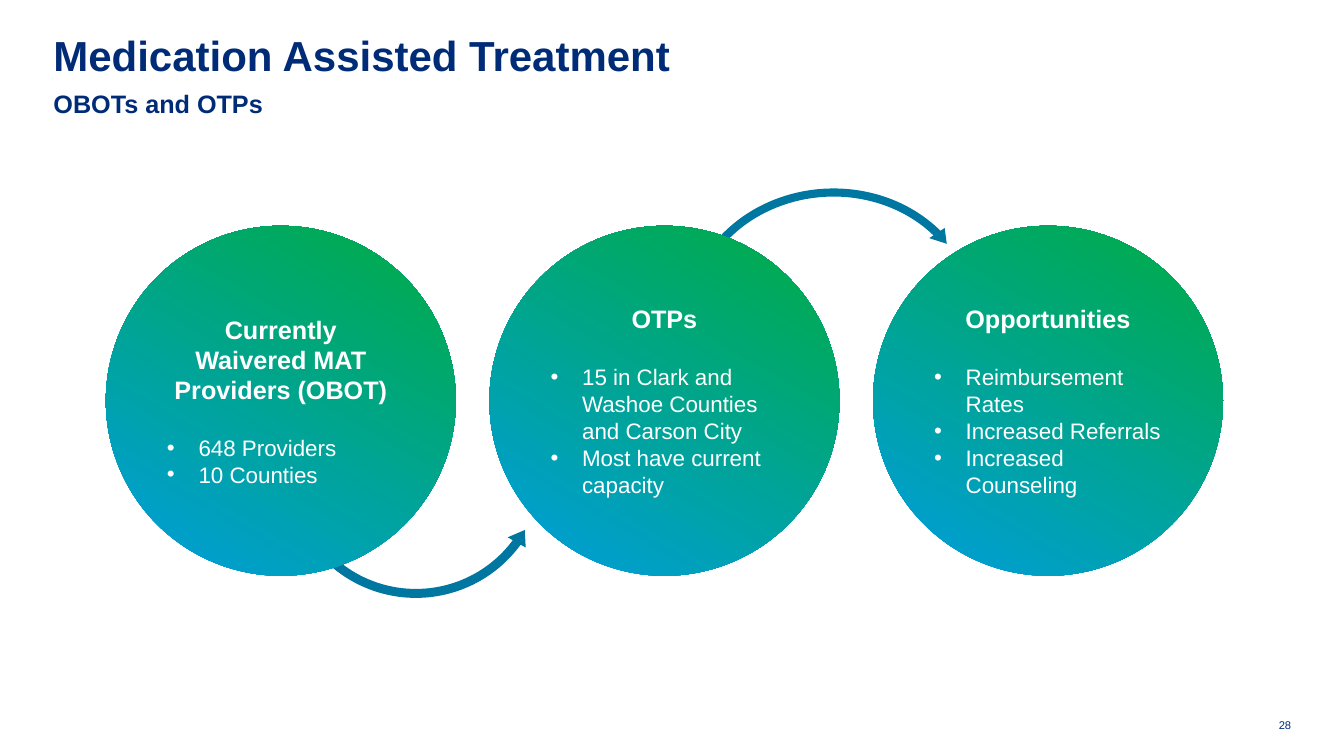
from dataclasses import dataclass

from lxml import etree
from pptx import Presentation
from pptx.dml.color import RGBColor
from pptx.enum.shapes import MSO_SHAPE
from pptx.enum.text import MSO_ANCHOR, PP_ALIGN
from pptx.oxml.ns import qn
from pptx.util import Pt

ELLIPSE = MSO_SHAPE.OVAL
CLOCKWISE = MSO_SHAPE.CIRCULAR_ARROW
COUNTERCLOCKWISE = MSO_SHAPE.LEFT_CIRCULAR_ARROW
LEFT, CENTER, RIGHT = PP_ALIGN.LEFT, PP_ALIGN.CENTER, PP_ALIGN.RIGHT
TOP, MIDDLE = MSO_ANCHOR.TOP, MSO_ANCHOR.MIDDLE


@dataclass(frozen=True)
class Theme:
    """Colours and type sizes of the slide."""

    font: str = "Arial"
    navy: str = "002C77"
    teal: str = "0077A0"
    blue: str = "009DE0"
    green: str = "00AC41"
    white: str = "FFFFFF"
    title: int = 30
    heading: int = 18
    body: int = 16
    number: int = 8


THEME = Theme()
CIRCLE_SIZE, CIRCLE_TOP = 250, 161.3
FIRST_CIRCLE, CIRCLE_STEP = 75.6, 274
BULLET_INDENT, HEADING_GAP = 22.5, 21
CIRCLES = [
    ("Currently Waivered MAT Providers (OBOT)", ["648 Providers", "10 Counties"]),
    ("OTPs", ["15 in Clark and Washoe\u00a0Counties and Carson City",
              "Most have current capacity"]),
    ("Opportunities", ["Reimbursement Rates", "Increased Referrals",
                       "Increased Counseling"]),
]


def add_bullet(para):
    """Give the paragraph a hanging bullet."""
    properties = para._p.get_or_add_pPr()
    properties.set("marL", str(Pt(BULLET_INDENT)))
    properties.set("indent", str(-Pt(BULLET_INDENT)))
    font = etree.SubElement(properties, qn("a:buFont"))
    font.set("typeface", THEME.font)
    etree.SubElement(properties, qn("a:buChar")).set("char", "•")


def write(para, text, size, color, bold=False, align=LEFT, bullet=False,
          before=0, line_spacing=None):
    """Put formatted text in a paragraph."""
    if bullet:
        add_bullet(para)
    para.alignment = align
    para.space_before = Pt(before)
    para.line_spacing = line_spacing
    span = para.add_run()
    span.text = text
    span.font.name = THEME.font
    span.font.size = Pt(size)
    span.font.bold = bold
    span.font.color.rgb = RGBColor.from_string(color)


def add_label(page, left, top, width, height, text, **style):
    """Add a text box without margins."""
    box = page.shapes.add_textbox(Pt(left), Pt(top), Pt(width), Pt(height))
    frame = box.text_frame
    frame.word_wrap = True
    frame.vertical_anchor = TOP
    frame.margin_left = frame.margin_right = 0
    frame.margin_top = frame.margin_bottom = 0
    write(frame.paragraphs[0], text, color=THEME.navy, **style)


def add_plain_shape(page, kind, left, top, width, height):
    """Add a preset shape without line or shadow."""
    shape = page.shapes.add_shape(kind, Pt(left), Pt(top), Pt(width), Pt(height))
    shape.shadow.inherit = False
    shape.line.fill.background()
    return shape


def add_arc_arrow(page, kind, left, top, width, height, thickness, head_width,
                  head_angle, end, start, rotation=0):
    """Add a curved arrow with its sizes in points and its angles in degrees."""
    arrow = add_plain_shape(page, kind, left, top, width, height)
    arrow.fill.solid()
    arrow.fill.fore_color.rgb = RGBColor.from_string(THEME.teal)
    arrow.rotation = rotation
    side = min(width, height)
    values = [thickness / side, head_angle * 0.6, end * 0.6, start * 0.6,
              head_width / side]
    for index, value in enumerate(values):
        arrow.adjustments[index] = value


def add_circle(page, left, heading, items):
    """Add a gradient circle with a heading and bullets."""
    circle = add_plain_shape(page, ELLIPSE, left, CIRCLE_TOP, CIRCLE_SIZE, CIRCLE_SIZE)
    circle.fill.gradient()
    circle.fill.gradient_angle = 60
    for stop, color in zip(circle.fill.gradient_stops, (THEME.blue, THEME.green)):
        stop.color.rgb = RGBColor.from_string(color)
    frame = circle.text_frame
    frame.word_wrap = True
    frame.vertical_anchor = MIDDLE
    write(frame.paragraphs[0], heading, THEME.heading, THEME.white, bold=True,
          align=CENTER)
    for index, item in enumerate(items):
        write(frame.add_paragraph(), item, THEME.body, THEME.white, bullet=True,
              before=0 if index else HEADING_GAP)


def main():
    """Build the slide and save it."""
    deck = Presentation()
    deck.slide_width, deck.slide_height = Pt(960), Pt(540)
    page = deck.slides.add_slide(deck.slide_layouts[6])
    add_label(page, 38.2, 28, 883.4, 39, "Medication Assisted Treatment",
              size=THEME.title, bold=True, line_spacing=0.8)
    add_label(page, 38.2, 63.4, 884, 25, "OBOTs and OTPs",
              size=THEME.heading, bold=True)
    add_label(page, 900, 513.4, 22.3, 9.4, "28", size=THEME.number, align=RIGHT)
    add_arc_arrow(page, CLOCKWISE, 486, 131, 216, 194.4, thickness=5.8,
                  head_width=6.6, head_angle=6.03, end=324.38, start=209.59,
                  rotation=356.3)
    add_arc_arrow(page, COUNTERCLOCKWISE, 200.2, 237.6, 193.7, 193.7, thickness=6.4,
                  head_width=7.4, head_angle=6.77, end=36.36, start=150.41)
    for index, (heading, items) in enumerate(CIRCLES):
        add_circle(page, FIRST_CIRCLE + index * CIRCLE_STEP, heading, items)
    deck.save("out.pptx")


if __name__ == "__main__":
    main()
